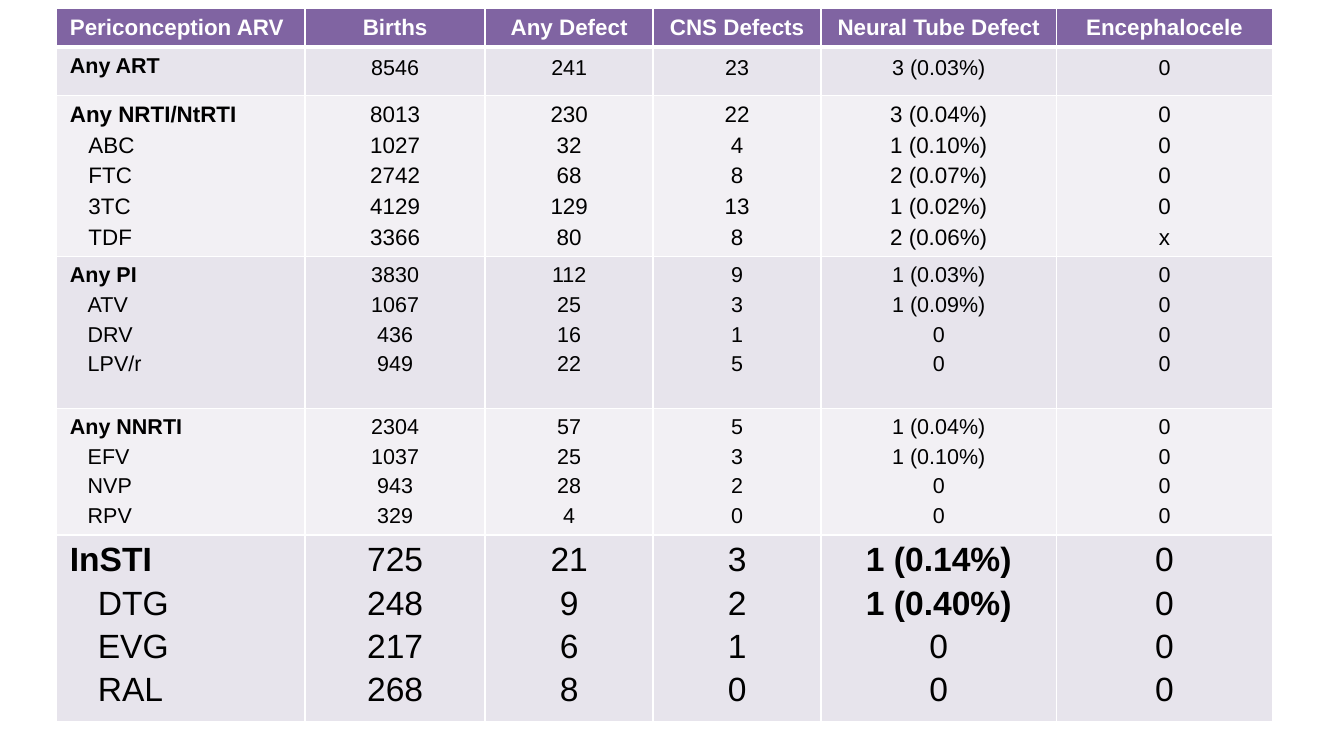
from dataclasses import dataclass

from lxml.etree import SubElement
from pptx import Presentation
from pptx.dml.color import RGBColor
from pptx.enum.text import PP_ALIGN
from pptx.oxml.ns import qn
from pptx.table import _Cell
from pptx.util import Inches, Pt

COLORS = {
    "head": "8064A2",
    "dark": "E7E4EC",
    "light": "F2F0F4",
    "white": "FFFFFF",
    "black": "000000",
}
HEADS = ["Periconception ARV", "Births", "Any Defect", "CNS Defects",
         "Neural Tube Defect", "Encephalocele"]
WIDTHS = [1.85, 1.34, 1.25, 1.25, 1.75, 1.61]
TUBE = HEADS.index("Neural Tube Defect")


@dataclass
class Group:
    """One table row: a drug class, then its drugs, one line each."""
    height: float
    size: float
    lines: list[list[str]]
    bold_tube: int = 0  # leading bold lines in the neural tube column
    pad: bool = False   # wider margins around the figures


GROUPS = [
    Group(0.36, 11.5, [
        ["Any ART", "8546", "241", "23", "3 (0.03%)", "0"],
    ], pad=True),
    Group(1.13, 12, [
        ["Any NRTI/NtRTI", "8013", "230", "22", "3 (0.04%)", "0"],
        ["ABC", "1027", "32", "4", "1 (0.10%)", "0"],
        ["FTC", "2742", "68", "8", "2 (0.07%)", "0"],
        ["3TC", "4129", "129", "13", "1 (0.02%)", "0"],
        ["TDF", "3366", "80", "8", "2 (0.06%)", "x"],
    ]),
    Group(1.13, 11.5, [
        ["Any PI", "3830", "112", "9", "1 (0.03%)", "0"],
        ["ATV", "1067", "25", "3", "1 (0.09%)", "0"],
        ["DRV", "436", "16", "1", "0", "0"],
        ["LPV/r", "949", "22", "5", "0", "0"],
    ]),
    Group(0.86, 11.5, [
        ["Any NNRTI", "2304", "57", "5", "1 (0.04%)", "0"],
        ["EFV", "1037", "25", "3", "1 (0.10%)", "0"],
        ["NVP", "943", "28", "2", "0", "0"],
        ["RPV", "329", "4", "0", "0", "0"],
    ]),
    Group(1.39, 18, [
        ["InSTI", "725", "21", "3", "1 (0.14%)", "0"],
        ["DTG", "248", "9", "2", "1 (0.40%)", "0"],
        ["EVG", "217", "6", "1", "0", "0"],
        ["RAL", "268", "8", "0", "0", "0"],
    ], bold_tube=2),
]
HEAD_ROW = 0.29


def set_frame(cell: _Cell, fill: str, top: float, bottom: float) -> None:
    """Give a cell white borders (widths in points) and a plain fill."""
    props = cell._tc.get_or_add_tcPr()
    for side, width in (("L", 1), ("R", 1), ("T", top), ("B", bottom)):
        line = SubElement(props, qn(f"a:ln{side}"), w=str(Pt(width)))
        paint = SubElement(line, qn("a:solidFill"))
        SubElement(paint, qn("a:srgbClr"), val=COLORS["white"])
    cell.fill.solid()
    cell.fill.fore_color.rgb = RGBColor.from_string(COLORS[fill])


def set_text(cell: _Cell, lines: list[str], size: float, color: str,
             bold: int, left: bool) -> None:
    """Write one paragraph per line; the first `bold` lines are bold."""
    frame = cell.text_frame
    frame.text = "\n".join(lines)
    for i, para in enumerate(frame.paragraphs):
        para.alignment = PP_ALIGN.LEFT if left else PP_ALIGN.CENTER
        para.space_before, para.space_after = Pt(2), Pt(1)
        font = para.font
        font.name, font.size, font.bold = "Arial", Pt(size), i < bold
        font.color.rgb = RGBColor.from_string(COLORS[color])
        # Drugs sit indented under their class
        if left and i > 0:
            para._p.get_or_add_pPr().set("marL", str(Pt(size * 0.83)))


def main() -> None:
    # Wide 16:9 slide
    prs = Presentation()
    prs.slide_width = Inches(10)
    prs.slide_height = Inches(10 * 9 / 16)
    slide = prs.slides.add_slide(prs.slide_layouts[6])

    # Table grid
    heights = [HEAD_ROW] + [group.height for group in GROUPS]
    table = slide.shapes.add_table(
        len(heights), len(WIDTHS), Inches(0.42), Inches(0.06),
        Inches(sum(WIDTHS)), Inches(sum(heights))).table
    for col, width in zip(table.columns, WIDTHS):
        col.width = Inches(width)
    for row, height in zip(table.rows, heights):
        row.height = Inches(height)

    # Header row
    for c, head in enumerate(HEADS):
        cell = table.cell(0, c)
        set_frame(cell, "head", 1, 3)
        set_text(cell, [head], 12, "white", 1, c == 0)

    # Drug classes
    for r, group in enumerate(GROUPS, 1):
        for c, lines in enumerate(zip(*group.lines)):
            cell = table.cell(r, c)
            set_frame(cell, "dark" if r % 2 else "light", 3 if r == 1 else 1, 1)
            bold = 1 if c == 0 else group.bold_tube if c == TUBE else 0
            set_text(cell, list(lines), group.size, "black", bold, c == 0)
            if group.pad and c > 0:
                cell.margin_left = cell.margin_right = Inches(0.13)
                cell.margin_top = cell.margin_bottom = Inches(0.07)

    prs.save("out.pptx")


if __name__ == "__main__":
    main()
